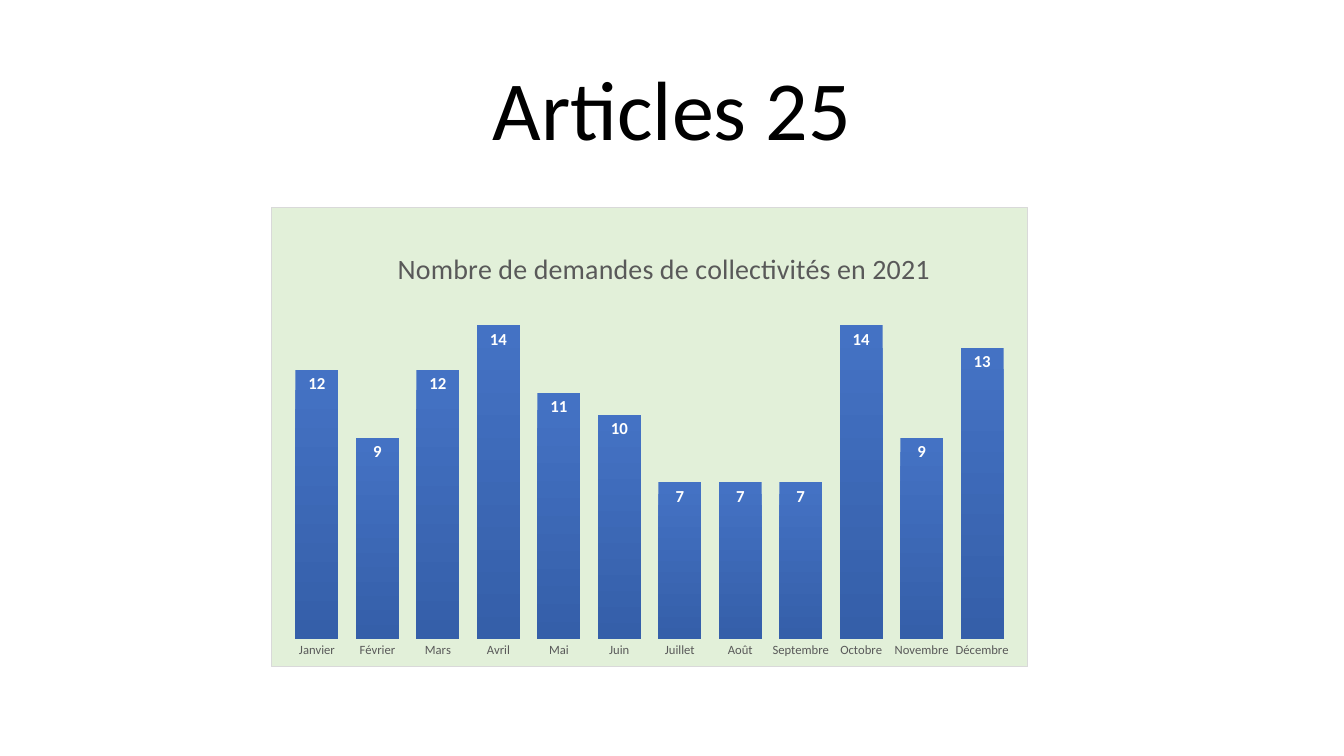
from dataclasses import dataclass

from lxml.etree import SubElement
from pptx import Presentation
from pptx.chart.chart import Chart
from pptx.chart.data import CategoryChartData
from pptx.dml.color import RGBColor
from pptx.enum.chart import XL_CHART_TYPE as ChartType
from pptx.enum.chart import XL_LABEL_POSITION as LabelPos
from pptx.enum.chart import XL_TICK_MARK as Tick
from pptx.enum.text import MSO_ANCHOR as Anchor
from pptx.enum.text import PP_ALIGN as Align
from pptx.oxml import parse_xml
from pptx.oxml.ns import nsdecls, qn
from pptx.util import Cm, Pt


@dataclass(frozen=True)
class Theme:
    font: str = "Calibri"
    black: str = "000000"
    white: str = "FFFFFF"
    grey: str = "595959"
    panel: str = "E2F0D9"
    border: str = "D9D9D9"
    bar_top: str = "4472C4"
    bar_bottom: str = "355FA9"
    title_size: int = 60
    chart_title_size: int = 20
    label_size: int = 12
    base_size: int = 10
    axis_size: int = 9


@dataclass(frozen=True)
class MonthCount:
    month: str
    requests: int


THEME = Theme()
CHART_TITLE = "Nombre de demandes de collectivités en 2021"
COUNTS = [
    MonthCount("Janvier", 12),
    MonthCount("Février", 9),
    MonthCount("Mars", 12),
    MonthCount("Avril", 14),
    MonthCount("Mai", 11),
    MonthCount("Juin", 10),
    MonthCount("Juillet", 7),
    MonthCount("Août", 7),
    MonthCount("Septembre", 7),
    MonthCount("Octobre", 14),
    MonthCount("Novembre", 9),
    MonthCount("Décembre", 13),
]


def style_font(font, size: int, color: str, bold: bool = False) -> None:
    font.name = THEME.font
    font.size = Pt(size)
    font.bold = bold
    font.color.rgb = RGBColor.from_string(color)


def set_layout(element, index: int, **settings) -> None:
    old = element.find(qn("c:layout"))
    if old is not None:
        element.remove(old)
    layout = parse_xml(f"<c:layout {nsdecls('c')}/>")
    manual = SubElement(layout, qn("c:manualLayout"))
    for name, value in settings.items():
        SubElement(manual, qn(f"c:{name}")).set("val", str(value))
    element.insert(index, layout)


def panel_properties(line: str):
    return parse_xml(
        f"<c:spPr {nsdecls('c', 'a')}><a:solidFill>"
        f'<a:srgbClr val="{THEME.panel}"/></a:solidFill>{line}</c:spPr>'
    )


def style_panel(chart: Chart) -> None:
    c = chart.element.find(qn("c:chart"))
    border = (
        f'<a:ln w="{Pt(0.75)}"><a:solidFill>'
        f'<a:srgbClr val="{THEME.border}"/></a:solidFill></a:ln>'
    )
    c.addnext(panel_properties(border))
    plot_area = c.find(qn("c:plotArea"))
    plot_area.append(panel_properties("<a:ln><a:noFill/></a:ln>"))
    set_layout(plot_area, 0, layoutTarget="inner", xMode="edge", yMode="edge",
               x=0.02, y=0.16, w=0.96, h=0.78)


def style_title(chart: Chart) -> None:
    chart.has_title = True
    p = chart.chart_title.text_frame.paragraphs[0]
    p.text = CHART_TITLE
    style_font(p.font, THEME.chart_title_size, THEME.grey)
    title = chart.element.find(qn("c:chart")).find(qn("c:title"))
    set_layout(title, 1, xMode="edge", yMode="edge", x=0.16, y=0.08)
    chart.chart_title.include_in_layout = False


def style_axes(chart: Chart) -> None:
    months = chart.category_axis
    months.major_tick_mark = months.minor_tick_mark = Tick.NONE
    months.format.line.fill.background()
    style_font(months.tick_labels.font, THEME.axis_size, THEME.grey)
    values = chart.value_axis
    values.minimum_scale, values.maximum_scale = 0, 16
    values.has_major_gridlines = False
    values.visible = False


def style_bars(chart: Chart) -> None:
    plot = chart.plots[0]
    plot.gap_width = 41
    plot.vary_by_categories = False
    fill = plot.series[0].format.fill
    fill.gradient()
    fill.gradient_angle = 270
    for stop, color in zip(fill.gradient_stops, (THEME.bar_top, THEME.bar_bottom)):
        stop.color.rgb = RGBColor.from_string(color)
    plot.has_data_labels = True
    labels = plot.data_labels
    labels.show_value = True
    labels.position = LabelPos.INSIDE_END
    style_font(labels.font, THEME.label_size, THEME.white, bold=True)


def add_requests_chart(s) -> None:
    data = CategoryChartData()
    data.categories = [c.month for c in COUNTS]
    data.add_series(CHART_TITLE, [c.requests for c in COUNTS])
    chart = s.shapes.add_chart(ChartType.COLUMN_CLUSTERED, Cm(6.83), Cm(5.21),
                               Cm(19.08), Cm(11.61), data).chart
    style_font(chart.font, THEME.base_size, THEME.black)
    chart.has_legend = False
    style_title(chart)
    style_axes(chart)
    style_bars(chart)
    style_panel(chart)


def add_title(s) -> None:
    sp = s.shapes.title
    sp.left, sp.top, sp.width, sp.height = Cm(2.33), Cm(1.01), Cm(29.21), Cm(3.68)
    tf = sp.text_frame
    tf.vertical_anchor = Anchor.MIDDLE
    p = tf.paragraphs[0]
    p.text = "Articles 25"
    p.alignment = Align.CENTER
    p.line_spacing = 0.9
    style_font(p.font, THEME.title_size, THEME.black)


def main() -> None:
    prs = Presentation()
    prs.slide_width, prs.slide_height = Cm(33.87), Cm(19.05)
    s = prs.slides.add_slide(prs.slide_layouts[5])
    add_title(s)
    add_requests_chart(s)
    prs.save("out.pptx")


if __name__ == "__main__":
    main()
